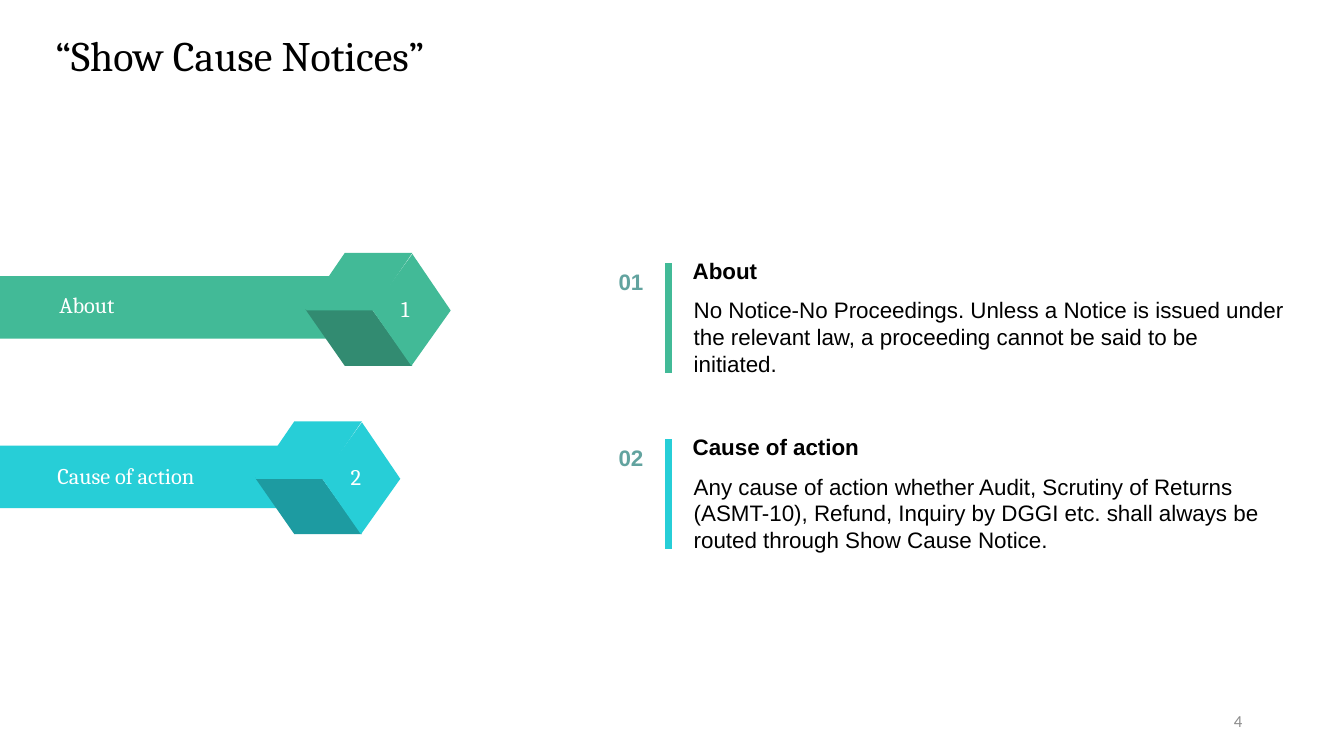
import pptx
import pptx.dml.color
import pptx.enum.shapes
import pptx.enum.text
import pptx.oxml
import pptx.util

RGB = pptx.dml.color.RGBColor
ALIGN = pptx.enum.text.PP_ALIGN
ANCHOR = pptx.enum.text.MSO_ANCHOR

EMU_PER_PX = 9144  # 100 px to the inch

BLACK = RGB(0x00, 0x00, 0x00)
WHITE = RGB(0xFF, 0xFF, 0xFF)
GREY = RGB(0x8C, 0x8C, 0x8C)
SAGE = RGB(0x62, 0xA3, 0x9F)
GREEN = RGB(0x42, 0xBA, 0x97)
DARK_GREEN = RGB(0x32, 0x8B, 0x71)
CYAN = RGB(0x27, 0xCE, 0xD7)
DARK_CYAN = RGB(0x1D, 0x9B, 0xA1)

# Outlines of the folded hexagon, relative to its top left corner
UPPER_FACE = [(39, 0), (106, 0), (67, 57), (0, 57)]
POINT_FACE = [(66, 56), (105, 112), (144, 57), (106, 1)]
FOLD = [(0, 56), (66, 56), (106, 112), (39, 112)]

TOPICS = [
    {
        "heading": "About",
        "body": "No Notice-No Proceedings. Unless a Notice is issued under "
                "the relevant law, a proceeding cannot be said to be initiated.",
        "color": GREEN, "fold_color": DARK_GREEN,
        "band": (0, 274, 363, 62), "label": (49, 284, 226, 37),
        "hexagon": (303, 251), "entry": (603, 251),
    },
    {
        "heading": "Cause of action",
        "body": "Any cause of action whether Audit, Scrutiny of Returns "
                "(ASMT-10), Refund, Inquiry by DGGI etc. shall always be "
                "routed through Show Cause Notice.",
        "color": CYAN, "fold_color": DARK_CYAN,
        "band": (-5, 442, 283, 62), "label": (47, 454, 305, 39),
        "hexagon": (253, 418), "entry": (603, 426),
    },
]


def px(length):
    return pptx.util.Emu(length * EMU_PER_PX)


def paint(shape, color):
    shape.fill.solid()
    shape.fill.fore_color.rgb = color
    shape.line.fill.background()
    shape.shadow.inherit = False


def write(frame, text, size, font, color, bold=False, align=ALIGN.LEFT):
    frame.text = text
    paragraph = frame.paragraphs[0]
    paragraph.alignment = align
    style = paragraph.runs[0].font
    style.size = pptx.util.Pt(size)
    style.name = font
    style.bold = bold
    style.color.rgb = color


def add_text(slide, box, text, size, font, color, wrap=True, inset=(10, 5), **style):
    frame = slide.shapes.add_textbox(*map(px, box)).text_frame
    frame.word_wrap = wrap
    frame.margin_left = frame.margin_right = px(inset[0])
    frame.margin_top = frame.margin_bottom = px(inset[1])
    write(frame, text, size, font, color, **style)
    return frame


def add_face(slide, left, top, outline, color):
    points = [(left + x, top + y) for x, y in outline]
    builder = slide.shapes.build_freeform(*points[0], scale=EMU_PER_PX)
    builder.add_line_segments(points[1:], close=True)
    paint(builder.convert_to_shape(), color)


def add_title(slide, box):
    title = slide.shapes.title
    title.left, title.top, title.width, title.height = map(px, box)
    frame = title.text_frame
    frame.vertical_anchor = ANCHOR.TOP
    frame.auto_size = pptx.enum.text.MSO_AUTO_SIZE.NONE
    write(frame, "“Show Cause Notices”", 30, "Cambria", BLACK)


def add_ribbon(slide, number, topic):
    """Band running in from the left edge, ending in a numbered folded hexagon."""
    band = slide.shapes.add_shape(
        pptx.enum.shapes.MSO_SHAPE.RECTANGLE, *map(px, topic["band"]))
    paint(band, topic["color"])
    label = add_text(slide, topic["label"], topic["heading"], 16, "Cambria", WHITE)
    label.paragraphs[0].space_before = pptx.util.Pt(3)

    left, top = topic["hexagon"]
    add_face(slide, left, top, FOLD, topic["fold_color"])
    add_face(slide, left, top, UPPER_FACE, topic["color"])
    add_face(slide, left, top, POINT_FACE, topic["color"])
    add_text(slide, (left + 85, top + 37, 31, 37), str(number), 16, "Cambria",
             WHITE, wrap=False)


def add_entry(slide, number, topic):
    """Number, coloured rule, heading and body text of one topic."""
    left, top = topic["entry"]
    add_text(slide, (left + 76, top + 39, 605, 90), topic["body"], 16, "Arial",
             BLACK, inset=(9, 4))
    add_text(slide, (left + 77, top, 182, 34), topic["heading"], 16, "Arial",
             BLACK, inset=(7, 4), bold=True)

    rule = slide.shapes.add_connector(
        pptx.enum.shapes.MSO_CONNECTOR.STRAIGHT,
        px(left + 60), px(top + 10), px(left + 60), px(top + 119))
    rule.line.color.rgb = topic["color"]
    rule.line.width = pptx.util.Pt(4.5)
    properties = rule.line._get_or_add_ln().getparent()
    properties.append(pptx.oxml.parse_xml(
        '<a:effectLst xmlns:a="http://schemas.openxmlformats.org/drawingml/2006/main"/>'))

    add_text(slide, (left, top + 10, 45, 37), f"{number:02}", 16, "Arial", SAGE,
             wrap=False, bold=True, align=ALIGN.RIGHT)


def add_page_number(slide, box):
    frame = add_text(slide, box, "4", 12, "Calibri", GREY, align=ALIGN.RIGHT)
    frame.vertical_anchor = ANCHOR.MIDDLE


def main():
    deck = pptx.Presentation()
    deck.slide_width, deck.slide_height = px(1333), px(750)
    slide = deck.slides.add_slide(deck.slide_layouts.get_by_name("Title Only"))
    add_title(slide, (45, 24, 1177, 61))
    for number, topic in enumerate(TOPICS, start=1):
        add_ribbon(slide, number, topic)
        add_entry(slide, number, topic)
    add_page_number(slide, (942, 695, 300, 40))
    deck.save("out.pptx")


if __name__ == "__main__":
    main()
